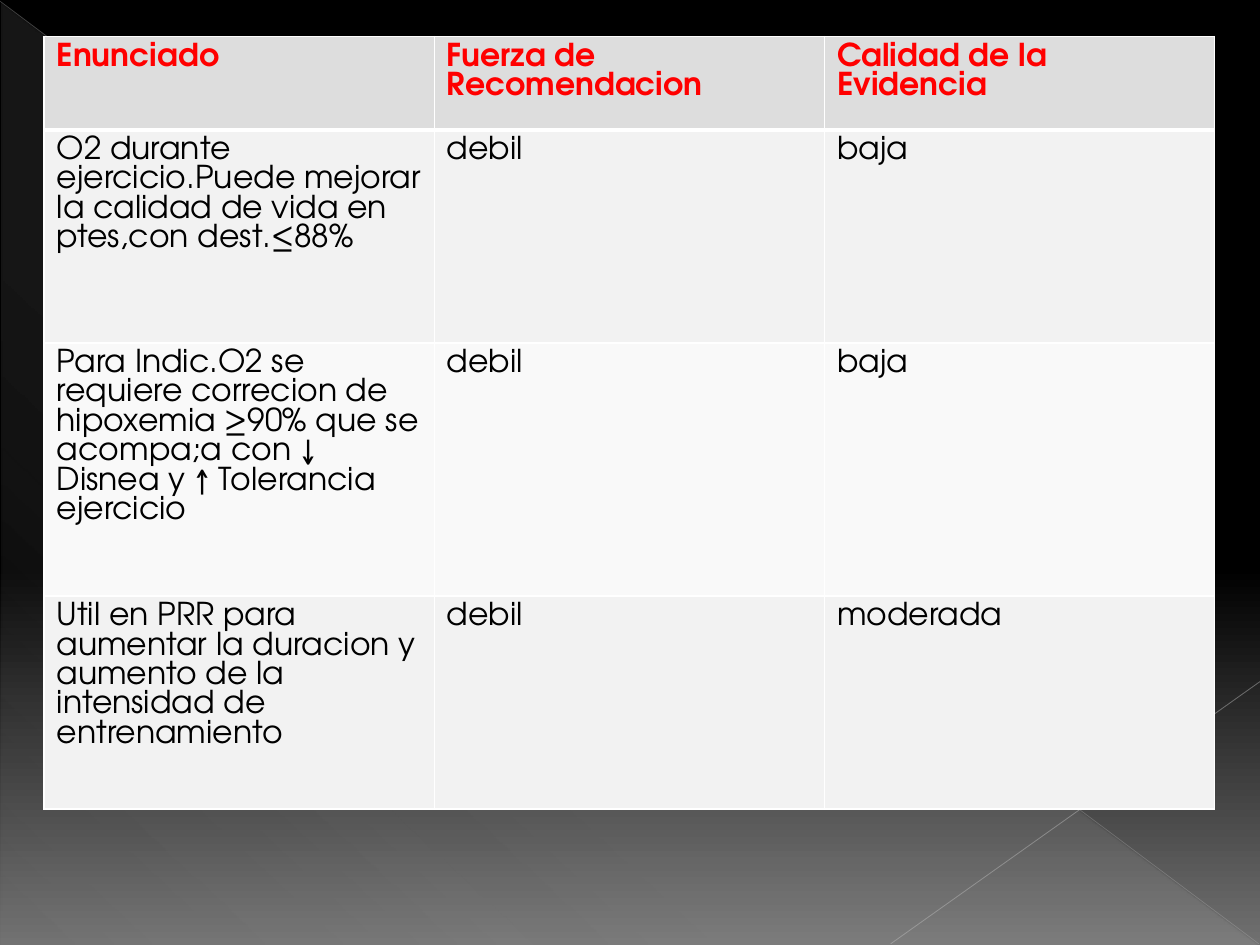
from lxml import etree
from pptx import Presentation
from pptx.dml.color import RGBColor
from pptx.enum.shapes import MSO_CONNECTOR, MSO_SHAPE
from pptx.oxml.ns import qn
from pptx.util import Pt

STRAIGHT = MSO_CONNECTOR.STRAIGHT
RIGHT_TRIANGLE = MSO_SHAPE.RIGHT_TRIANGLE
FONT = "TeX Gyre Adventor"
BLANK_LAYOUT = 6
WIDTH, HEIGHT = 720, 540

ROW_HEIGHTS = [53.3, 121.7, 144.7, 121.7]
ROW_FILLS = ["DDDDDD", "F2F2F2", "F9F9F9", "F2F2F2"]
ROWS = [
    ["Enunciado", "Fuerza de Recomendacion", "Calidad de la Evidencia"],
    ["O2 durante ejercicio.Puede mejorar la calidad de vida en ptes,con dest.≤88%",
     "debil", "baja"],
    ["Para Indic.O2 se requiere correcion de hipoxemia ≥90% que se acompa;a con ↓ "
     "Disnea y ↑ Tolerancia ejercicio", "debil", "baja"],
    ["Util en PRR para aumentar la duracion y aumento de la intensidad de entrenamiento",
     "debil", "moderada"],
]


def color(value):
    return RGBColor.from_string(value)


def add_color(parent, value, opacity=100):
    element = etree.SubElement(parent, qn("a:srgbClr"), val=value)
    if opacity < 100:
        etree.SubElement(element, qn("a:alpha"), val=str(opacity * 1000))


def set_gradient(fill, stops, angle):
    """Fill with (position, colour, opacity) stops; angle runs clockwise."""
    fill.gradient()
    gradient = fill._fill._gradFill
    for child in list(gradient):
        gradient.remove(child)
    stop_list = etree.SubElement(gradient, qn("a:gsLst"))
    for position, value, opacity in stops:
        stop = etree.SubElement(stop_list, qn("a:gs"), pos=str(position * 1000))
        add_color(stop, value, opacity)
    etree.SubElement(gradient, qn("a:lin"), ang=str(angle * 60000), scaled="0")


def add_line(slide, start, end, value, width, opacity):
    connector = slide.shapes.add_connector(
        STRAIGHT, *(Pt(length) for length in (*start, *end)))
    connector.line.width = Pt(width)
    connector.line.color.rgb = color(value)
    line_color = connector.line._ln.find(".//" + qn("a:srgbClr"))
    etree.SubElement(line_color, qn("a:alpha"), val=str(opacity * 1000))
    etree.SubElement(connector._element.spPr, qn("a:effectLst"))


def add_backdrop(slide, width, height):
    set_gradient(slide.background.fill,
                 [(0, "000000", 100), (60, "000000", 100), (100, "707070", 100)], 90)
    triangle = slide.shapes.add_shape(
        RIGHT_TRIANGLE, Pt(0.7), Pt(1.4), Pt(width - 1.4), Pt(height - 1.4))
    triangle.shadow.inherit = False
    triangle.line.fill.background()
    set_gradient(triangle.fill,
                 [(0, "F8F8F8", 10), (70, "F8F8F8", 8), (100, "F8F8F8", 1)], 133)
    add_line(slide, (0, 0.7), (width - 0.7, height - 0.7), "B4B4B4", 0.39, 35)
    add_line(slide, (width, 389.5), (509, height - 0.7), "BDBDBD", 0.47, 45)


def set_borders(cell, bottom_width):
    """Draw white borders; they must come before the cell's fill."""
    properties = cell._tc.get_or_add_tcPr()
    for side, width in (("L", 1), ("R", 1), ("T", 1), ("B", bottom_width)):
        line = etree.SubElement(properties, qn("a:ln" + side), w=str(Pt(width)))
        add_color(etree.SubElement(line, qn("a:solidFill")), "FFFFFF")


def fill_cell(cell, text, fill, is_header, bottom_width):
    set_borders(cell, bottom_width)
    cell.fill.solid()
    cell.fill.fore_color.rgb = color(fill)
    run = cell.text_frame.paragraphs[0].add_run()
    run.text = text
    run.font.name = FONT
    run.font.size = Pt(18)
    run.font.bold = is_header
    run.font.color.rgb = color("FF0000" if is_header else "000000")


def add_evidence_table(slide, left, top, width):
    table = slide.shapes.add_table(
        len(ROWS), len(ROWS[0]), Pt(left), Pt(top), Pt(width), Pt(sum(ROW_HEIGHTS))).table
    for column in table.columns:
        column.width = Pt(width / len(ROWS[0]))
    for row_index, texts in enumerate(ROWS):
        table.rows[row_index].height = Pt(ROW_HEIGHTS[row_index])
        is_header = row_index == 0
        for column_index, text in enumerate(texts):
            cell = table.cell(row_index, column_index)
            fill_cell(cell, text, ROW_FILLS[row_index], is_header, 3 if is_header else 1)
            if row_index == 1:
                top_line = cell._tc.tcPr.find(qn("a:lnT"))
                top_line.set("w", str(Pt(3)))


def main():
    presentation = Presentation()
    presentation.slide_width = Pt(WIDTH)
    presentation.slide_height = Pt(HEIGHT)
    slide = presentation.slides.add_slide(presentation.slide_layouts[BLANK_LAYOUT])
    add_backdrop(slide, WIDTH, HEIGHT)
    add_evidence_table(slide, 25.2, 20.9, 669)
    presentation.save("out.pptx")


if __name__ == "__main__":
    main()
